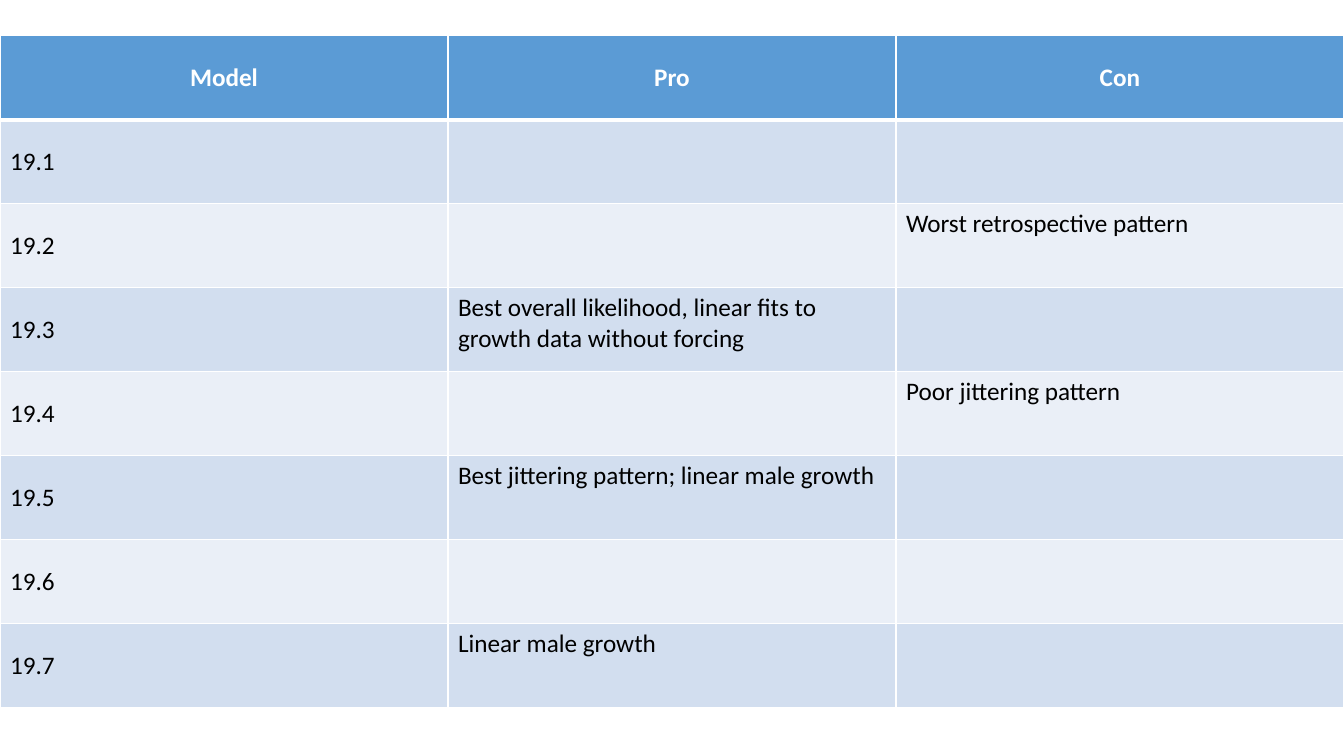
from dataclasses import dataclass

from lxml import etree
from pptx import Presentation, util as u
from pptx.dml.color import RGBColor
from pptx.enum import text
from pptx.oxml.ns import qn

PX = 9525  # EMU per px, 96 px to the inch


@dataclass(frozen=True)
class Theme:
    font: str = "Calibri"
    size: int = 18
    head: str = "5B9BD5"
    bands: tuple = ("EAEFF7", "D2DEEF")
    light: str = "FFFFFF"
    dark: str = "000000"
    thin: int = 1
    thick: int = 3


THEME = Theme()

ROWS = [
    ("Model", "Pro", "Con"),
    ("19.1", "", ""),
    ("19.2", "", "Worst retrospective pattern"),
    ("19.3", "Best overall likelihood, linear fits to growth data without forcing", ""),
    ("19.4", "", "Poor jittering pattern"),
    ("19.5", "Best jittering pattern; linear male growth", ""),
    ("19.6", "", ""),
    ("19.7", "Linear male growth", ""),
]


def rgb(code):
    return RGBColor.from_string(code)


def edge(cell, side, width):
    """Draw one cell border; call in the order L, R, T, B."""
    line = etree.SubElement(cell._tc.get_or_add_tcPr(), qn("a:ln" + side), w=str(u.Pt(width)))
    fill = etree.SubElement(line, qn("a:solidFill"))
    etree.SubElement(fill, qn("a:srgbClr"), val=THEME.light)


def style(cell, row, col):
    head = row == 0

    # Borders, with a heavy rule under the header
    for side in "LRTB":
        rule = (row, side) in ((0, "B"), (1, "T"))
        edge(cell, side, THEME.thick if rule else THEME.thin)

    # Fill and anchor
    cell.fill.solid()
    cell.fill.fore_color.rgb = rgb(THEME.head if head else THEME.bands[row % 2])
    middle = head or col == 0
    cell.vertical_anchor = text.MSO_ANCHOR.MIDDLE if middle else text.MSO_ANCHOR.TOP

    # Type
    para = cell.text_frame.paragraphs[0]
    para.alignment = text.PP_ALIGN.CENTER if head else text.PP_ALIGN.LEFT
    font = para.font
    font.name, font.size, font.bold = THEME.font, u.Pt(THEME.size), head
    font.color.rgb = rgb(THEME.light if head else THEME.dark)


def grid(slide, rows, left, top, width, height):
    """Fill the given box with a table of equal rows and columns."""
    box = [n * PX for n in (left, top, width, height)]
    table = slide.shapes.add_table(len(rows), len(rows[0]), *box).table
    for line in table.rows:
        line.height = box[3] // len(rows)
    for r, words in enumerate(rows):
        for c, word in enumerate(words):
            cell = table.cell(r, c)
            cell.text = word
            style(cell, r, c)


def main():
    deck = Presentation()
    deck.slide_width, deck.slide_height = 1280 * PX, 720 * PX
    slide = deck.slides.add_slide(deck.slide_layouts[6])

    # Model comparison
    grid(slide, ROWS, 0, 34, 1280, 640)
    deck.save("out.pptx")


if __name__ == "__main__":
    main()
